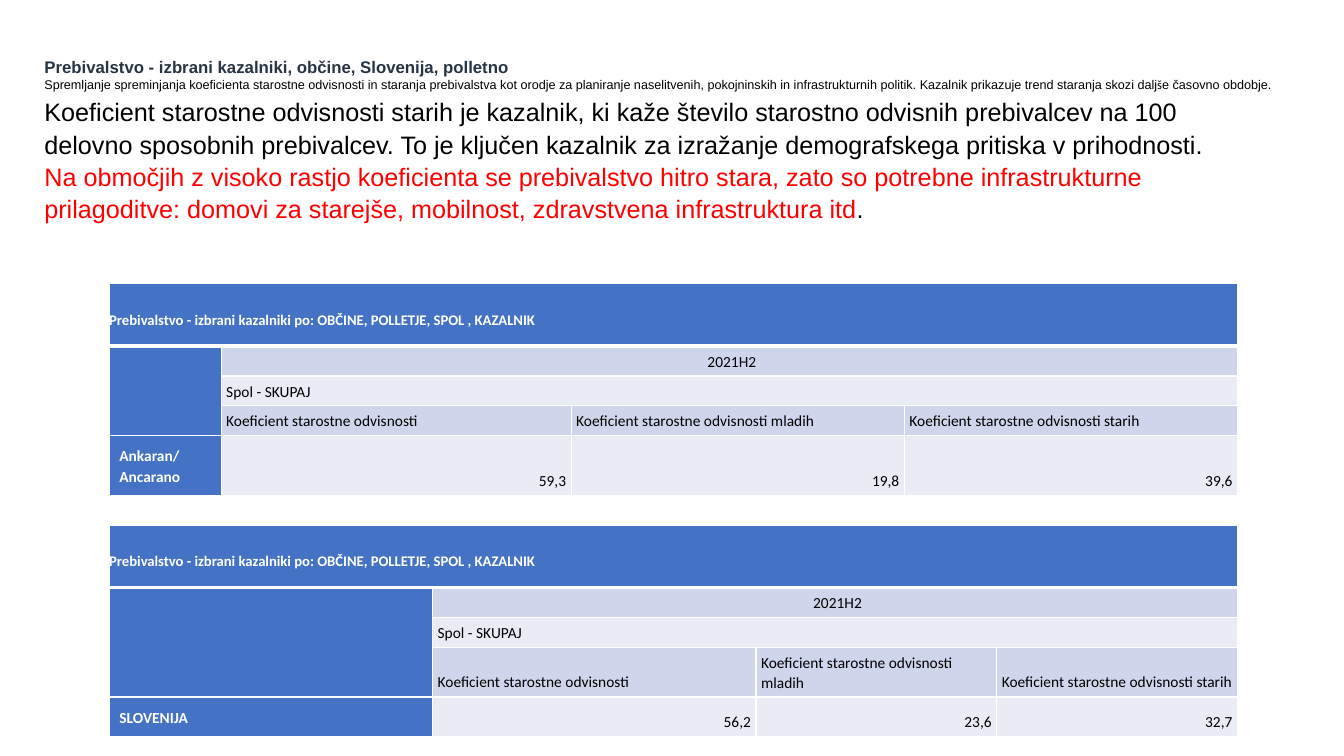
from pptx import Presentation
from pptx import util as u
from pptx.dml.color import RGBColor
from pptx.enum import text
from pptx.oxml import parse_xml
from pptx.oxml.ns import nsdecls

BLUE, BAND, PALE, WHITE, BLACK, RED = "4472C4", "CFD5EA", "E9EBF5", "FFFFFF", "000000", "FF0000"
LEFT, CENTER, RIGHT = text.PP_ALIGN.LEFT, text.PP_ALIGN.CENTER, text.PP_ALIGN.RIGHT


def color(code):
    return RGBColor.from_string(code)


def format_span(span, size, code, bold=False, name="Arial"):
    span.font.size = u.Pt(size)
    span.font.name = name
    span.font.bold = bold
    span.font.color.rgb = color(code)


deck = Presentation()
deck.slide_width = u.Pt(960)
deck.slide_height = u.Pt(540)
page = deck.slides.add_slide(deck.slide_layouts[1])

heading = [
    [("Prebivalstvo - izbrani kazalniki, občine, Slovenija, polletno", 12, "273443", True, "Arial")],
    [("Spremljanje spreminjanja koeficienta starostne odvisnosti in staranja prebivalstva kot orodje "
      "za planiranje naselitvenih, pokojninskih in infrastrukturnih politik. "
      "Kazalnik prikazuje trend staranja skozi dalj", 9, BLACK, False, "Arial"),
     ("š", 9, BLACK, False, "Calibri"),
     ("e časovno obdobje.", 9, BLACK, False, "Arial")],
]
summary = [
    [("Koeficient starostne odvisnosti starih je kazalnik, ki kaže število starostno odvisnih "
      "prebivalcev na 100 delovno sposobnih prebivalcev. To je ključen kazalnik za izražanje "
      "demografskega pritiska v prihodnosti. ", 18, BLACK, False, "Arial"),
     ("Na območjih z visoko rastjo koeficienta se prebivalstvo hitro stara, zato so potrebne "
      "infrastrukturne prilagoditve: domovi za starejše, mobilnost, zdravstvena infrastruktura itd",
      18, RED, False, "Arial"),
     (".", 18, BLACK, False, "Arial")],
]
text_blocks = [
    (page.shapes.title, heading, (24.5, 36.7, 1145.5, 32.4), text.MSO_ANCHOR.MIDDLE, 1, 0),
    (page.placeholders[1], summary, (24.5, 64, 853.2, 99.4), text.MSO_ANCHOR.TOP, 1.07, 8),
]
for box, lines, frame, anchor, spacing, after in text_blocks:
    box.left, box.top, box.width, box.height = [u.Pt(value) for value in frame]
    box.text_frame.word_wrap = True
    box.text_frame.auto_size = text.MSO_AUTO_SIZE.SHAPE_TO_FIT_TEXT
    box.text_frame.vertical_anchor = anchor
    for index, line in enumerate(lines):
        para = box.text_frame.add_paragraph() if index else box.text_frame.paragraphs[0]
        para.alignment = LEFT
        para.line_spacing = spacing
        para.space_before = u.Pt(0)
        para.space_after = u.Pt(after)
        properties = para._p.get_or_add_pPr()
        properties.set("marL", "0")
        properties.set("indent", "0")
        properties.append(parse_xml(f"<a:buNone {nsdecls('a')}/>"))
        for wording, size, code, bold, name in line:
            span = para.add_run()
            span.text = wording
            format_span(span, size, code, bold, name)

table_title = "Prebivalstvo - izbrani kazalniki po: OBČINE, POLLETJE, SPOL , KAZALNIK"
indicators = ["Koeficient starostne odvisnosti" + group for group in ("", " mladih", " starih")]
merges = [((0, 0), (0, 3)), ((1, 0), (3, 0)), ((1, 1), (1, 3)), ((2, 1), (2, 3))]
tables = [
    (375, (231, 231, 172, 172), (36.7, 18.7, 18.7, 31, 25.2), ["SLOVENIJA", "56,2", "23,6", "32,7"]),
    (202.5, (80, 250, 238, 238), (36.7, 18, 18, 18, 37.4), ["Ankaran/Ancarano", "59,3", "19,8", "39,6"]),
]
for top, widths, heights, values in tables:
    box = page.shapes.add_table(5, 4, u.Pt(78), u.Pt(top), u.Pt(sum(widths)), u.Pt(sum(heights)))
    table = box.table
    for column, width in zip(table.columns, widths):
        column.width = u.Pt(width)
    for row, height in zip(table.rows, heights):
        row.height = u.Pt(height)
    for first, last in merges:
        table.cell(*first).merge(table.cell(*last))

    content = [
        [table_title, "", "", ""],
        ["", "2021H2", "", ""],
        ["", "Spol - SKUPAJ", "", ""],
        ["", *indicators],
        values,
    ]
    for row, wordings in enumerate(content):
        for column, wording in enumerate(wordings):
            cell = table.cell(row, column)
            dark = row == 0 or column == 0
            margins, alignment, anchor = (3.6, 3.6, 3.6, 3.6), LEFT, text.MSO_ANCHOR.BOTTOM
            if row == 0:
                margins = (0, 11.5, 3.6, 12.2)
            elif row == 1:
                margins, alignment = (7.2, 3.6, 3.6, 3.6), CENTER
            elif row == 4 and column == 0:
                margins, anchor = (7.2, 7.2, 7.2, 7.2), text.MSO_ANCHOR.MIDDLE
            elif row == 4:
                alignment = RIGHT
            cell.margin_left, cell.margin_top, cell.margin_right, cell.margin_bottom = map(u.Pt, margins)
            cell.vertical_anchor = anchor
            for side in ("lnL", "lnR", "lnT", "lnB"):
                thick = (row, side) in ((0, "lnB"), (1, "lnT"))
                cell._tc.get_or_add_tcPr().append(parse_xml(
                    f'<a:{side} {nsdecls("a")} w="{u.Pt(3 if thick else 1)}"><a:solidFill>'
                    f'<a:srgbClr val="{WHITE}"/></a:solidFill></a:{side}>'))
            cell.fill.solid()
            cell.fill.fore_color.rgb = color(BLUE if dark else BAND if row % 2 else PALE)
            if wording:
                cell.text_frame.text = wording
                para = cell.text_frame.paragraphs[0]
                para.alignment = alignment
                para.line_spacing = 1.07 if row else u.Pt(21)
                para.space_after = u.Pt(8)
                format_span(para.runs[0], 11 if row else 10.5, WHITE if dark else BLACK, dark, "Calibri")

deck.save("out.pptx")
